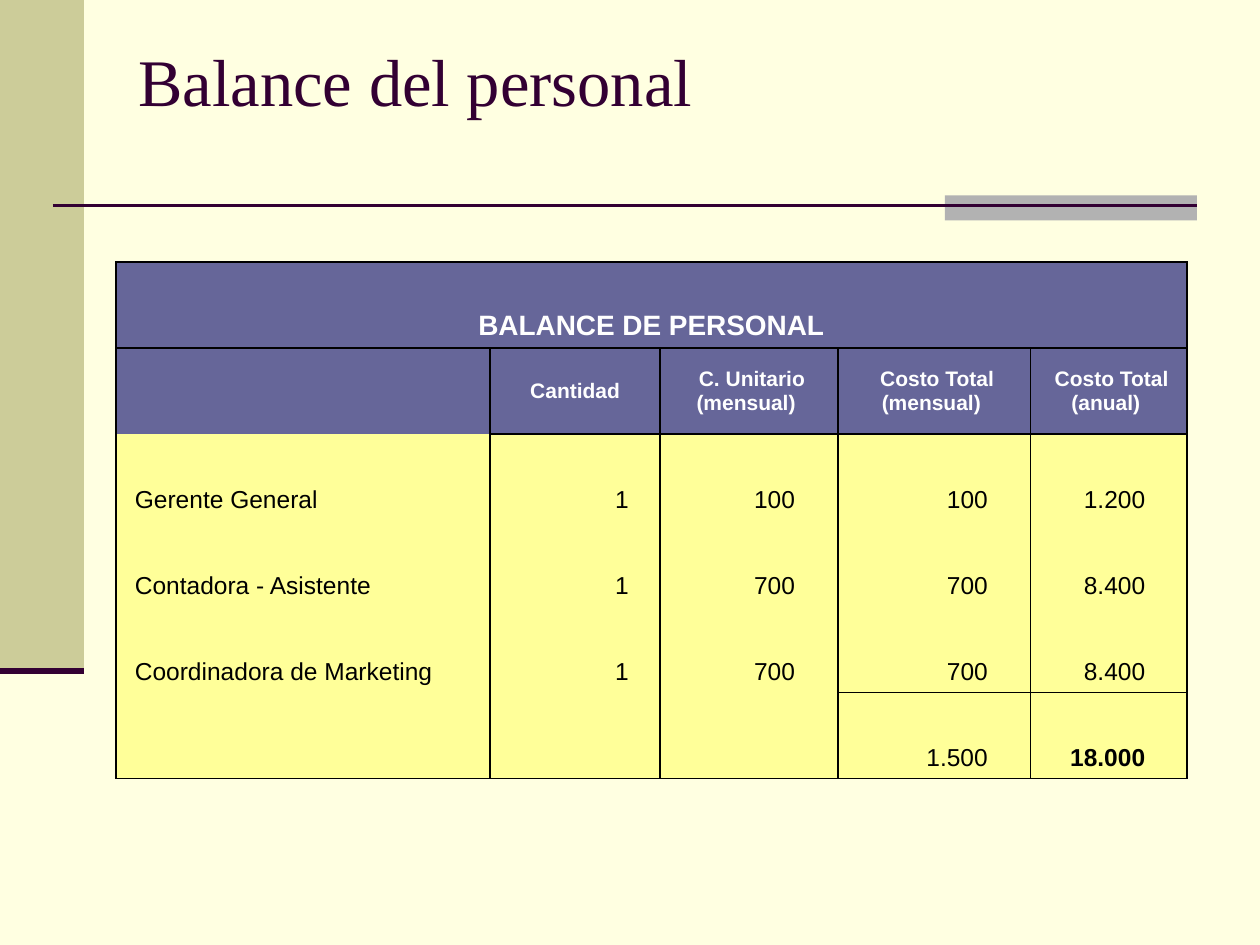
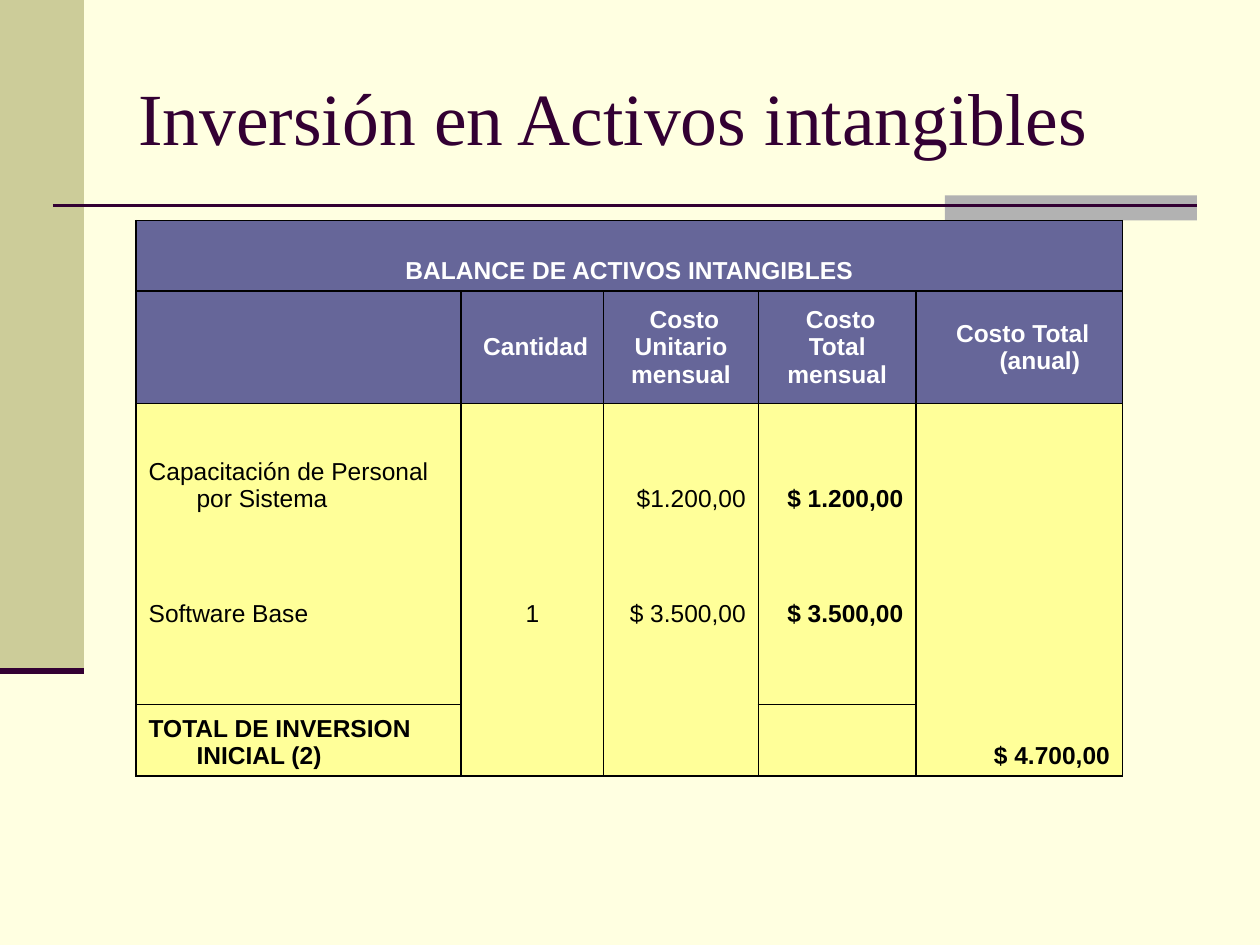
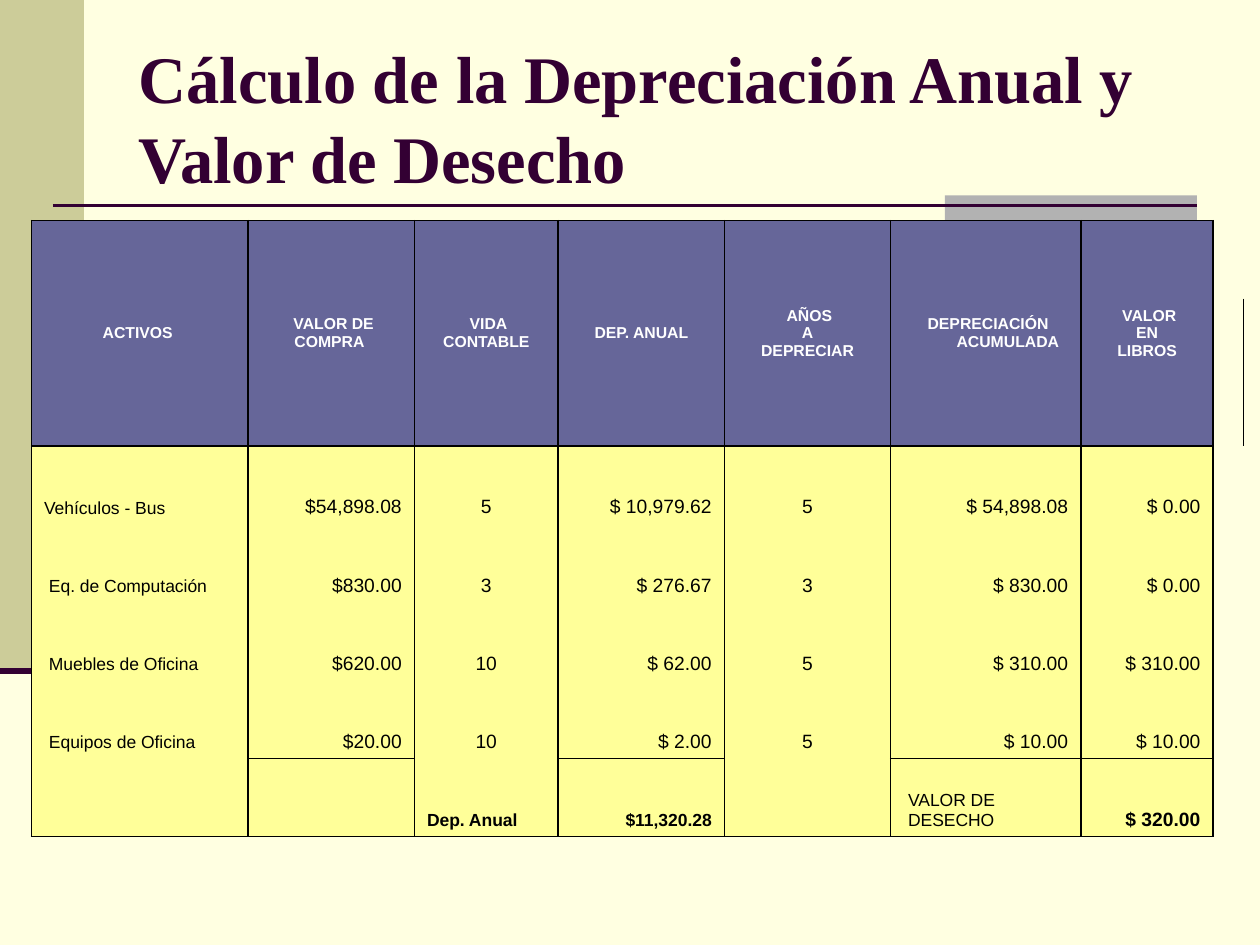
from dataclasses import dataclass, field

from lxml import etree
from pptx import Presentation
from pptx import util as u
from pptx.dml.color import RGBColor
from pptx.enum import shapes, text
from pptx.oxml.ns import qn

PAPER, OLIVE, GREY, PLUM = "FFFFE1", "CCCC99", "B2B2B2", "330033"
HEAD_FILL, BODY_FILL, WHITE, BLACK = "666699", "FFFF99", "FFFFFF", "000000"
WIDTH, HEIGHT = 10, 7.5
BAND_WIDTH, BAND_HEIGHT = WIDTH / 15, HEIGHT * 0.71
RULE_TOP, RULE_RIGHT = 1.63, 9.5
HANGING = 0.38
PLAIN_STYLE = "{2D5ABB26-0587-4C30-8999-92F81FD0307C}"
ALIGN = {"l": text.PP_ALIGN.LEFT, "c": text.PP_ALIGN.CENTER, "r": text.PP_ALIGN.RIGHT}
MIDDLE, TOP, BOTTOM = (text.MSO_ANCHOR.MIDDLE, text.MSO_ANCHOR.TOP, text.MSO_ANCHOR.BOTTOM)


@dataclass
class Sheet:
    """A table: its grid, its words and the cells that differ from the rule."""
    left: float
    top: float
    columns: list
    rows: list
    words: dict
    aligns: str
    head_rows: int
    head_size: int
    body_size: int
    merges: list = field(default_factory=list)
    underlined: set = field(default_factory=set)
    open_cells: set = field(default_factory=set)
    bold: set = field(default_factory=set)
    sizes: dict = field(default_factory=dict)
    left_cells: set = field(default_factory=set)
    insets: dict = field(default_factory=dict)
    hanging: float = HANGING
    spare_column: bool = False


def color(value):
    """Turn a hex string into a colour."""
    return RGBColor.from_string(value)


def add_block(page, left, top, width, height, fill):
    """Draw a plain filled rectangle."""
    block = page.shapes.add_shape(shapes.MSO_SHAPE.RECTANGLE, *map(u.Inches, (left, top, width, height)))
    block.shadow.inherit = False
    block.fill.solid()
    block.fill.fore_color.rgb = color(fill)
    block.line.fill.background()


def add_rule(page, left, right, top, weight):
    """Draw a horizontal line."""
    rule = page.shapes.add_connector(shapes.MSO_CONNECTOR.STRAIGHT, *map(u.Inches, (left, top, right, top)))
    rule.line.color.rgb = color(PLUM)
    rule.line.width = u.Pt(weight)
    etree.SubElement(rule._element.spPr, qn("a:effectLst"))


def add_page(deck, title, size, bold=False, anchor=MIDDLE):
    """Add a slide with the shared bands, rules and title."""
    page = deck.slides.add_slide(deck.slide_layouts[6])
    page.background.fill.solid()
    page.background.fill.fore_color.rgb = color(PAPER)
    add_block(page, 0, 0, BAND_WIDTH, BAND_HEIGHT, OLIVE)
    add_block(page, RULE_RIGHT - 2, 1.55, 2, 0.2, GREY)
    add_rule(page, 0.42, RULE_RIGHT, RULE_TOP, 1.5)
    add_rule(page, 0, BAND_WIDTH, BAND_HEIGHT, 3.5)
    box = page.shapes.add_textbox(*map(u.Inches, (1, 0.3, 8.5, 1.25)))
    frame = box.text_frame
    frame.word_wrap = True
    frame.vertical_anchor = anchor
    frame.margin_top = frame.margin_bottom = u.Inches(0.02)
    frame.text = title
    style_font(frame.paragraphs[0].font, "Times New Roman", size, bold, PLUM)
    return page


def style_font(font, name, size, bold, shade):
    """Set a font's face, size, weight and colour."""
    font.name, font.size, font.bold = name, u.Pt(size), bold
    font.color.rgb = color(shade)


def set_borders(cell, sides):
    """Draw thin black lines on the given sides of a cell."""
    properties = cell._tc.get_or_add_tcPr()
    for place, side in enumerate(sides):
        line = etree.Element(qn(f"a:ln{side}"), w=str(u.Pt(1)))
        fill = etree.SubElement(line, qn("a:solidFill"))
        etree.SubElement(fill, qn("a:srgbClr"), val=BLACK)
        properties.insert(place, line)


def fill_cell(cell, sheet, row, column):
    """Write and style one cell by its place in the sheet."""
    spot = (row, column)
    head = row < sheet.head_rows
    cell.fill.solid()
    cell.fill.fore_color.rgb = color(HEAD_FILL if head else BODY_FILL)
    cell.vertical_anchor = MIDDLE if head and len(sheet.words[row]) > 1 else BOTTOM
    words = sheet.words.get(row, [])
    cell.text = words[column] if column < len(words) else ""
    align = "c" if head else "l" if spot in sheet.left_cells else sheet.aligns[column]
    if not head and column in sheet.insets:
        side = "margin_left" if align == "l" else "margin_right"
        setattr(cell, side, u.Inches(sheet.insets[column]))
    size = sheet.sizes.get(spot, sheet.head_size if head else sheet.body_size)
    for para in cell.text_frame.paragraphs:
        para.alignment = ALIGN[align]
        style_font(para.font, "Arial", size, head or spot in sheet.bold, WHITE if head else BLACK)
        if sheet.hanging:
            indent = u.Inches(sheet.hanging)
            para._p.get_or_add_pPr().set("marL", str(indent))
            para._p.get_or_add_pPr().set("indent", str(-indent))
        if not para.runs:
            etree.SubElement(para._p, qn("a:endParaRPr"), sz=str(size * 100))
    closed = (head and spot not in sheet.open_cells) or spot in sheet.underlined
    last = row == len(sheet.rows) - 1
    set_borders(cell, "LR" + "T" * (row == 0) + "B" * (closed or last))


def add_sheet(page, sheet):
    """Place a sheet on the slide as a table."""
    frame = page.shapes.add_table(
        len(sheet.rows), len(sheet.columns),
        *map(u.Inches, (sheet.left, sheet.top, sum(sheet.columns), sum(sheet.rows))))
    table = frame.table
    table.first_row = table.horz_banding = False
    table._tbl.tblPr.find(qn("a:tableStyleId")).text = PLAIN_STYLE
    for column, width in zip(table.columns, sheet.columns):
        column.width = u.Inches(width)
    for row, height in zip(table.rows, sheet.rows):
        row.height = u.Inches(height)
    for first, last in sheet.merges:
        table.cell(*first).merge(table.cell(*last))
    for row in range(len(sheet.rows)):
        for column in range(len(sheet.columns)):
            cell = table.cell(row, column)
            if sheet.spare_column and column == len(sheet.columns) - 1:
                cell.fill.background()
                set_borders(cell, "LR" if 0 < row < sheet.head_rows else "L")
            else:
                fill_cell(cell, sheet, row, column)


def staff_sheet():
    """Describe the staff costs."""
    return Sheet(
        0.92, 2.08, [2.97, 1.35, 1.41, 1.53, 1.24], [4.1 / 6] * 6,
        {0: ["BALANCE DE PERSONAL"],
         1: ["", "Cantidad", " C. Unitario (mensual) ", " Costo Total (mensual) ", " Costo Total (anual) "],
         2: ["Gerente General", "1", "100", "100", "1.200"],
         3: ["Contadora - Asistente", "1", "700", "700", "8.400"],
         4: ["Coordinadora de Marketing", "1", "700", "700", "8.400"],
         5: ["", "", "", "1.500", "18.000"]},
        "lrrrr", head_rows=2, head_size=12, body_size=14,
        merges=[((0, 0), (0, 4))], underlined={(4, 3), (4, 4)}, open_cells={(1, 0)},
        bold={(5, 4)}, sizes={(0, 0): 16}, hanging=0,
        insets={0: 0.15, 1: 0.25, 2: 0.34, 3: 0.34, 4: 0.33})


def intangibles_sheet():
    """Describe the intangible assets."""
    return Sheet(
        1.08, 1.75, [2.58, 1.13, 1.23, 1.25, 1.64], [0.56, 0.56, 0.32, 0.92, 0.91, 0.56, 0.54],
        {0: ["BALANCE DE ACTIVOS INTANGIBLES"],
         1: ["", " Cantidad ", " Costo\nUnitario\nmensual", " Costo\nTotal\nmensual", " Costo Total (anual) "],
         2: [],
         3: ["Capacitación de Personal por Sistema", "", "$1.200,00", "$ 1.200,00"],
         4: ["Software Base", "1", "$ 3.500,00", "$ 3.500,00"],
         6: ["TOTAL DE INVERSION INICIAL (2)", "", "", "", "$ 4.700,00"]},
        "lcrrr", head_rows=3, head_size=14, body_size=14,
        merges=[((0, 0), (0, 4))] + [((1, column), (2, column)) for column in range(1, 5)],
        underlined={(5, 0), (5, 3)}, open_cells={(1, 0)},
        bold={(3, 3), (4, 3), (6, 0), (6, 4)})


def depreciation_sheet():
    """Describe the depreciation of each asset."""
    names = {(row, 0): 10 for row in range(3, 7)}
    return Sheet(
        0.25, 1.75, [1.72, 1.32, 1.14, 1.32, 1.32, 1.51, 1.05, 0.23], [0.62] * 2 + [0.51] + [0.62] * 5,
        {0: ["ACTIVOS ", " VALOR DE\nCOMPRA ", " VIDA\nCONTABLE", " DEP. ANUAL ", " AÑOS\nA\nDEPRECIAR",
             " DEPRECIACIÓN ACUMULADA ", " VALOR\nEN\nLIBROS"],
         1: [],
         2: [],
         3: ["Vehículos - Bus", "$54,898.08", "5", "$ 10,979.62", "5", "$ 54,898.08", "$ 0.00"],
         4: [" Eq. de Computación", "$830.00", "3", "$ 276.67", "3", "$ 830.00", "$ 0.00"],
         5: [" Muebles de Oficina", "$620.00", "10", "$ 62.00", "5", "$ 310.00", "$ 310.00"],
         6: [" Equipos de Oficina", "$20.00", "10", "$ 2.00", "5", "$ 10.00", "$ 10.00"],
         7: ["", "", "Dep. Anual", "$11,320.28", "", " VALOR DE\n DESECHO", "$ 320.00"]},
        "lrcrcrr", head_rows=3, head_size=9, body_size=11,
        merges=[((0, column), (2, column)) for column in range(7)],
        underlined={(6, column) for column in (1, 3, 5, 6)},
        bold={(7, 2), (7, 3), (7, 6)}, sizes={**names, (7, 2): 10, (7, 3): 10, (7, 5): 10},
        left_cells={(7, 2), (7, 5)}, spare_column=True)


def main():
    """Build the deck and save it."""
    deck = Presentation()
    deck.slide_width, deck.slide_height = u.Inches(WIDTH), u.Inches(HEIGHT)
    add_sheet(add_page(deck, "Balance del personal", 38, anchor=TOP), staff_sheet())
    add_sheet(add_page(deck, "Inversión en Activos intangibles", 42), intangibles_sheet())
    title = "Cálculo de la Depreciación Anual y Valor de Desecho"
    add_sheet(add_page(deck, title, 38, bold=True), depreciation_sheet())
    deck.save("out.pptx")


if __name__ == "__main__":
    main()
